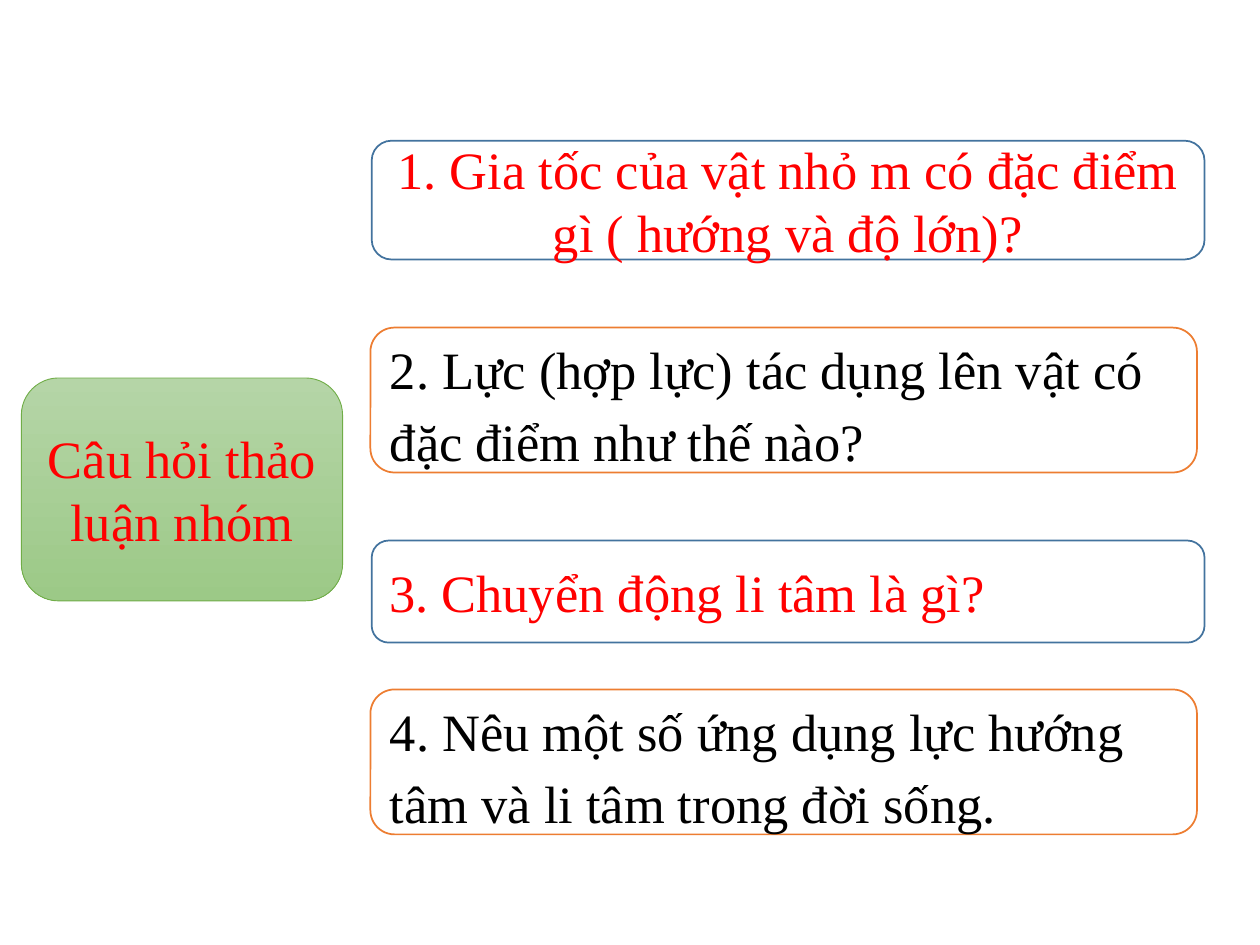
from dataclasses import dataclass

from pptx import Presentation
from pptx import util as u
from pptx.dml.color import RGBColor
from pptx.enum import shapes, text


@dataclass(frozen=True)
class Theme:
    font: str = "Times New Roman"
    size: float = 30
    red: str = "FF0000"
    black: str = "000000"
    white: str = "FFFFFF"
    blue: str = "43739E"
    orange: str = "ED7D31"
    green: str = "70AD47"
    green_top: str = "B5D5A7"
    green_bottom: str = "9CC987"


def rgb(value):
    return RGBColor.from_string(value)


def write(frame, words, *, font, size, color, align=text.PP_ALIGN.LEFT,
          line_spacing=1.0, space_after=0):
    frame.word_wrap = True
    frame.vertical_anchor = text.MSO_ANCHOR.MIDDLE
    paragraph = frame.paragraphs[0]
    paragraph.alignment = align
    paragraph.line_spacing = line_spacing
    paragraph.space_after = u.Pt(space_after)
    run = paragraph.add_run()
    run.text = words
    run.font.name = font
    run.font.size = u.Pt(size)
    run.font.color.rgb = rgb(color)


class Board:
    def __init__(self, slide, theme):
        self.slide = slide
        self.theme = theme

    def card(self, box, words, border, color, weight=1, **layout):
        card = self.slide.shapes.add_shape(
            shapes.MSO_SHAPE.ROUNDED_RECTANGLE, *map(u.Pt, box))
        card.shadow.inherit = False
        card.fill.solid()
        card.fill.fore_color.rgb = rgb(self.theme.white)
        card.line.color.rgb = rgb(border)
        card.line.width = u.Pt(weight)
        write(card.text_frame, words, font=self.theme.font,
              size=self.theme.size, color=color, **layout)
        return card

    def topic(self, box, words):
        topic = self.card(box, words, self.theme.green, self.theme.red,
                          weight=0.5, align=text.PP_ALIGN.CENTER)
        topic.fill.gradient()
        topic.fill.gradient_angle = 270
        ends = (self.theme.green_top, self.theme.green_bottom)
        for stop, color in zip(topic.fill.gradient_stops, ends):
            stop.color.rgb = rgb(color)

    def red_question(self, top, height, words, **layout):
        self.card((212.4, top, 475.9, height), words,
                  self.theme.blue, self.theme.red, **layout)

    def black_question(self, top, words):
        self.card((211.7, top, 472.3, 82.8), words,
                  self.theme.orange, self.theme.black,
                  line_spacing=1.15, space_after=8)


def main():
    deck = Presentation()
    deck.slide_width, deck.slide_height = u.Pt(720), u.Pt(540)
    board = Board(deck.slides.add_slide(deck.slide_layouts[6]), Theme())

    board.topic((12.2, 216, 183.6, 127.4), "Câu hỏi thảo luận nhóm")
    board.red_question(
        80.4, 67.9, "1. Gia tốc của vật nhỏ m có đặc điểm gì ( hướng và độ lớn)?",
        align=text.PP_ALIGN.CENTER)
    board.black_question(
        187.2, "2. Lực (hợp lực) tác dụng lên vật có đặc điểm như thế nào?")
    board.red_question(308.9, 58.3, "3. Chuyển động li tâm là gì?")
    board.black_question(
        394, "4. Nêu một số ứng dụng lực hướng tâm và li tâm trong đời sống.")

    deck.save("out.pptx")


if __name__ == "__main__":
    main()
